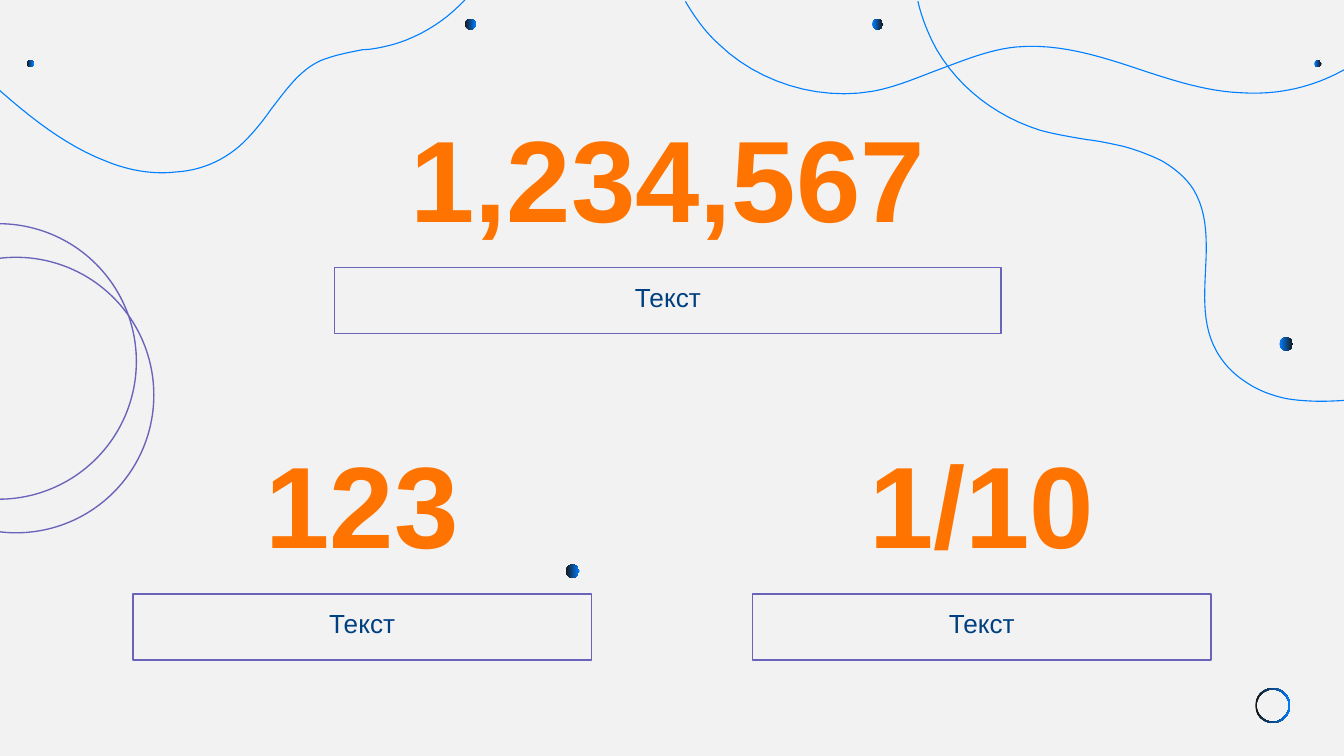
import pptx
import pptx.util
import pptx.dml.color
import pptx.enum.shapes
import pptx.enum.text

Inches, Pt = pptx.util.Inches, pptx.util.Pt
RGBColor = pptx.dml.color.RGBColor
SHAPE = pptx.enum.shapes.MSO_SHAPE
ANCHOR = pptx.enum.text.MSO_ANCHOR

PAPER = RGBColor(0xF2, 0xF2, 0xF2)
ORANGE = RGBColor(0xFF, 0x74, 0x01)
NAVY = RGBColor(0x00, 0x3F, 0x80)
PURPLE = RGBColor(0x6A, 0x63, 0xBA)
BLUE = RGBColor(0x00, 0x7F, 0xFF)
BLACK = RGBColor(0x16, 0x16, 0x16)

WIDTH = 10
HEIGHT = WIDTH * 9 / 16

# number, label, left, number top, label top, width
STATS = [
    ("1/10", "Текст", 5.6, 3.12, 4.42, 3.41),
    ("123", "Текст", 0.99, 3.12, 4.42, 3.41),
    ("1,234,567", "Текст", 2.49, 0.7, 1.99, 4.96),
]
NUMBER_HEIGHT, LABEL_HEIGHT = 1.16, 0.49

# Bezier curves: a start point, then two controls and an end for each segment
WAVES = [
    [(5.1, 0.01), (5.17, 0.13), (5.25, 0.24), (5.35, 0.33),
     (5.64, 0.61), (6.08, 0.75), (6.49, 0.68), (6.66, 0.65), (6.82, 0.58), (6.98, 0.52),
     (7.17, 0.45), (7.36, 0.37), (7.56, 0.35), (7.88, 0.32), (8.19, 0.42), (8.49, 0.52),
     (8.73, 0.6), (8.98, 0.68), (9.23, 0.69), (9.5, 0.71), (9.77, 0.65), (10, 0.52)],
    [(6.83, 0.01), (6.86, 0.14), (6.91, 0.26), (6.97, 0.37),
     (7.14, 0.66), (7.42, 0.87), (7.74, 0.97), (7.85, 1), (7.97, 1.02), (8.09, 1.04),
     (8.18, 1.05), (8.27, 1.07), (8.36, 1.09), (8.47, 1.12), (8.57, 1.16), (8.65, 1.2),
     (8.75, 1.26), (8.83, 1.33), (8.88, 1.41), (8.99, 1.59), (8.98, 1.81), (8.97, 2.02),
     (8.96, 2.22), (8.95, 2.43), (9.05, 2.61), (9.1, 2.7), (9.17, 2.78), (9.28, 2.85),
     (9.37, 2.91), (9.48, 2.95), (9.59, 2.97), (9.73, 2.99), (9.86, 2.99), (10, 2.98)],
    [(3.46, 0), (3.3, 0.17), (3.09, 0.3), (2.85, 0.35),
     (2.8, 0.36), (2.75, 0.37), (2.7, 0.37), (2.6, 0.39), (2.49, 0.41), (2.39, 0.45),
     (2.23, 0.52), (2.13, 0.67), (2.02, 0.81), (1.95, 0.91), (1.87, 1.01), (1.78, 1.09),
     (1.65, 1.2), (1.49, 1.27), (1.31, 1.28), (1.14, 1.3), (0.96, 1.27), (0.79, 1.2),
     (0.48, 1.08), (0.22, 0.87), (-0.04, 0.64)],
]
STEPS = 12

# left, top, diameter
PURPLE_RINGS = [(-0.91, 1.91, 2.06), (-1.04, 1.66, 2.06)]
SMALL_RING = (9.34, 5.12, 0.26)
RING_THICKNESS = 0.01
# left, top, diameter, left-hand colour, right-hand colour
DOTS = [
    (4.21, 4.2, 0.1, BLACK, BLUE),
    (3.46, 0.14, 0.08, BLACK, BLUE),
    (0.2, 0.45, 0.05, BLACK, BLUE),
    (9.52, 2.51, 0.1, BLUE, BLACK),
    (6.49, 0.14, 0.08, BLUE, BLACK),
    (9.78, 0.45, 0.05, BLUE, BLACK),
]


def sample(points):
    """Return points along a chain of cubic Bezier segments, in EMU."""
    sampled = [points[0]]
    for i in range(0, len(points) - 1, 3):
        corners = points[i:i + 4]
        for step in range(1, STEPS + 1):
            t = step / STEPS
            weights = ((1 - t) ** 3, 3 * t * (1 - t) ** 2, 3 * t * t * (1 - t), t ** 3)
            sampled.append([sum(w * c[axis] for w, c in zip(weights, corners))
                            for axis in (0, 1)])
    return [(Inches(x), Inches(y)) for x, y in sampled]


def add_wave(page, points):
    start, *rest = sample(points)
    builder = page.shapes.build_freeform(*start, scale=1.0)
    builder.add_line_segments(rest, close=False)
    wave = builder.convert_to_shape()
    wave.shadow.inherit = False
    wave.fill.background()
    wave.line.color.rgb = BLUE
    wave.line.width = Pt(0.6)


def add_round(page, kind, left, top, size, *colours):
    """Add a round shape, filled with one colour or a left-to-right blend."""
    shape = page.shapes.add_shape(kind, Inches(left), Inches(top), Inches(size), Inches(size))
    shape.shadow.inherit = False
    shape.line.fill.background()
    if kind == SHAPE.DONUT:
        shape.adjustments[0] = RING_THICKNESS / size
    if len(colours) == 1:
        shape.fill.solid()
        shape.fill.fore_color.rgb = colours[0]
        return
    shape.fill.gradient()
    shape.fill.gradient_angle = 0
    for stop, colour in zip(shape.fill.gradient_stops, colours):
        stop.color.rgb = colour


def write(box, text, size, colour, bold, anchor, bottom):
    frame = box.text_frame
    frame.text = text
    frame.word_wrap = True
    frame.vertical_anchor = anchor
    frame.margin_left = frame.margin_right = frame.margin_top = Inches(0.1)
    frame.margin_bottom = Inches(bottom)
    para = frame.paragraphs[0]
    para.alignment = pptx.enum.text.PP_ALIGN.CENTER
    font = para.runs[0].font
    font.name, font.size, font.bold = "Arial", Pt(size), bold
    font.color.rgb = colour


def add_stat(page, number, label, left, number_top, label_top, width):
    number_box = page.shapes.add_textbox(
        Inches(left), Inches(number_top), Inches(width), Inches(NUMBER_HEIGHT))
    write(number_box, number, 62, ORANGE, True, ANCHOR.BOTTOM, 0.03)
    label_box = page.shapes.add_shape(
        SHAPE.RECTANGLE, Inches(left), Inches(label_top), Inches(width), Inches(LABEL_HEIGHT))
    label_box.shadow.inherit = False
    label_box.fill.background()
    label_box.line.color.rgb = PURPLE
    label_box.line.width = Pt(0.75)
    write(label_box, label, 14, NAVY, False, ANCHOR.TOP, 0.1)


def main():
    deck = pptx.Presentation()
    deck.slide_width, deck.slide_height = Inches(WIDTH), Inches(HEIGHT)
    page = deck.slides.add_slide(deck.slide_layouts[6])
    page.background.fill.solid()
    page.background.fill.fore_color.rgb = PAPER
    for ring in PURPLE_RINGS:
        add_round(page, SHAPE.DONUT, *ring, PURPLE)
    for points in WAVES:
        add_wave(page, points)
    add_round(page, SHAPE.DONUT, *SMALL_RING, BLACK, BLUE)
    for dot in DOTS:
        add_round(page, SHAPE.OVAL, *dot)
    for stat in STATS:
        add_stat(page, *stat)
    deck.save("out.pptx")


if __name__ == "__main__":
    main()
